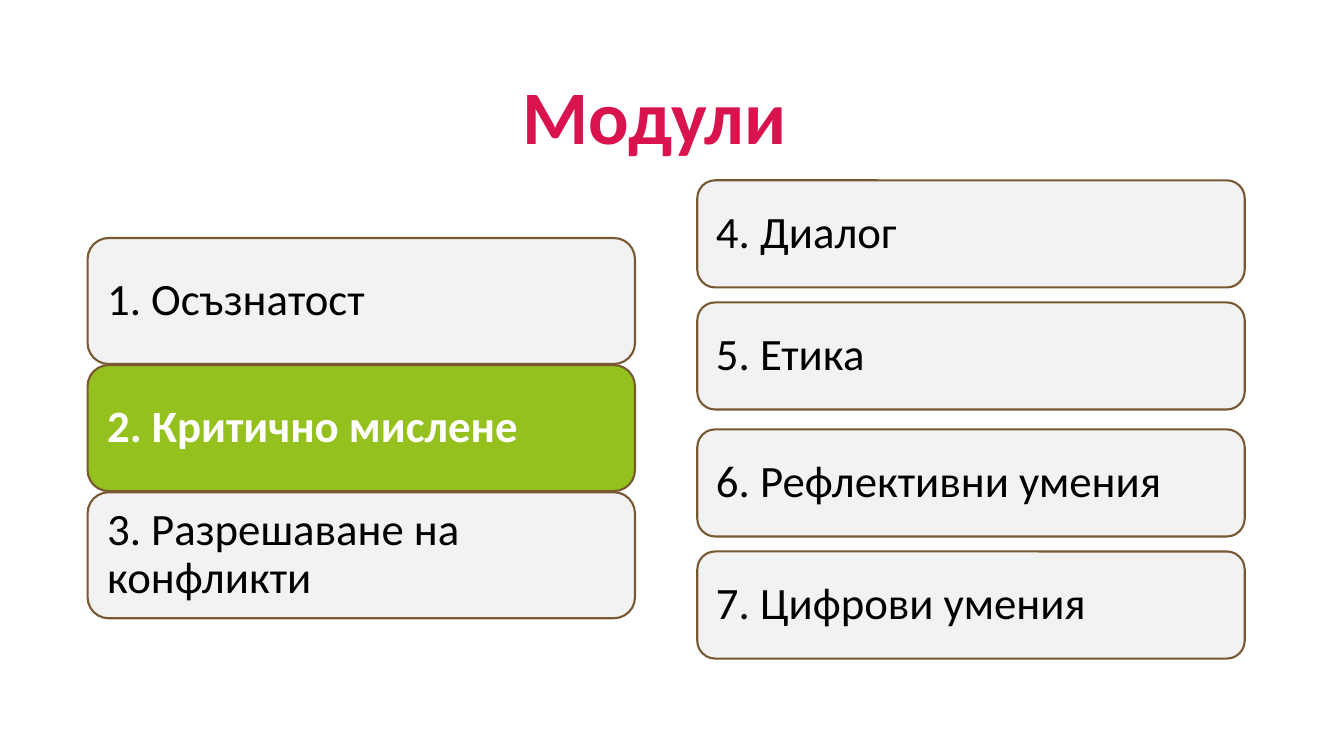
import pptx
import pptx.dml.color
import pptx.enum.shapes
import pptx.enum.text
import pptx.util

Pt = pptx.util.Pt
RGBColor = pptx.dml.color.RGBColor
MSO_ANCHOR = pptx.enum.text.MSO_ANCHOR
PP_ALIGN = pptx.enum.text.PP_ALIGN

CRIMSON = RGBColor(0xD8, 0x13, 0x4D)
GREY = RGBColor(0xF2, 0xF2, 0xF2)
GREEN = RGBColor(0x95, 0xC1, 0x1F)
BROWN = RGBColor(0x78, 0x58, 0x32)
BLACK = RGBColor(0, 0, 0)
WHITE = RGBColor(0xFF, 0xFF, 0xFF)

FONT = "Calibri"
CURRENT_MODULE = "2. Критично мислене"
COLUMN_WIDTH = 391
LEFT_COLUMN = 62.6
RIGHT_COLUMN = 498.1


def format_paragraph(p, text, size, color, bold, align):
    p.text = text
    p.alignment = align
    p.line_spacing = 0.9
    p.font.name = FONT
    p.font.size = Pt(size)
    p.font.bold = bold
    p.font.color.rgb = color


def add_title(slide, text, left, top, width, height):
    title = slide.shapes.title
    title.left, title.top = Pt(left), Pt(top)
    title.width, title.height = Pt(width), Pt(height)
    tf = title.text_frame
    tf.auto_size = pptx.enum.text.MSO_AUTO_SIZE.NONE
    tf.vertical_anchor = MSO_ANCHOR.BOTTOM
    format_paragraph(tf.paragraphs[0], text, 54, CRIMSON, True, PP_ALIGN.CENTER)


def add_module(slide, text, left, top, width, height):
    current = text == CURRENT_MODULE
    sp = slide.shapes.add_shape(
        pptx.enum.shapes.MSO_SHAPE.ROUNDED_RECTANGLE,
        Pt(left), Pt(top), Pt(width), Pt(height))
    sp.shadow.inherit = False
    sp.fill.solid()
    sp.fill.fore_color.rgb = GREEN if current else GREY
    sp.line.color.rgb = BROWN
    sp.line.width = Pt(1.5)
    tf = sp.text_frame
    tf.word_wrap = True
    tf.vertical_anchor = MSO_ANCHOR.MIDDLE
    tf.margin_left = tf.margin_right = Pt(9.6)
    tf.margin_top = tf.margin_bottom = Pt(9.6)
    format_paragraph(tf.paragraphs[0], text, 32, WHITE if current else BLACK,
                     current, PP_ALIGN.LEFT)


def add_stack(slide, modules, left, top, width, height, gap):
    """Stack module boxes of equal height downwards from the given corner."""
    for i, text in enumerate(modules):
        add_module(slide, text, left, top + i * (height + gap), width, height)


def main():
    prs = pptx.Presentation()
    prs.slide_width, prs.slide_height = Pt(960), Pt(540)
    slide = prs.slides.add_slide(prs.slide_layouts.get_by_name("Title Only"))
    add_title(slide, "Модули", 0.7, -21.6, 933.8, 140.4)
    add_stack(slide, ["1. Осъзнатост", CURRENT_MODULE, "3. Разрешаване на конфликти"],
              LEFT_COLUMN, 170, COLUMN_WIDTH, 90, 0.8)
    add_stack(slide, ["4. Диалог", "5. Етика"],
              RIGHT_COLUMN, 128.8, COLUMN_WIDTH, 76.5, 10.7)
    add_stack(slide, ["6. Рефлективни умения", "7. Цифрови умения"],
              RIGHT_COLUMN, 306.7, COLUMN_WIDTH, 76.5, 10.7)
    prs.save("out.pptx")


if __name__ == "__main__":
    main()
